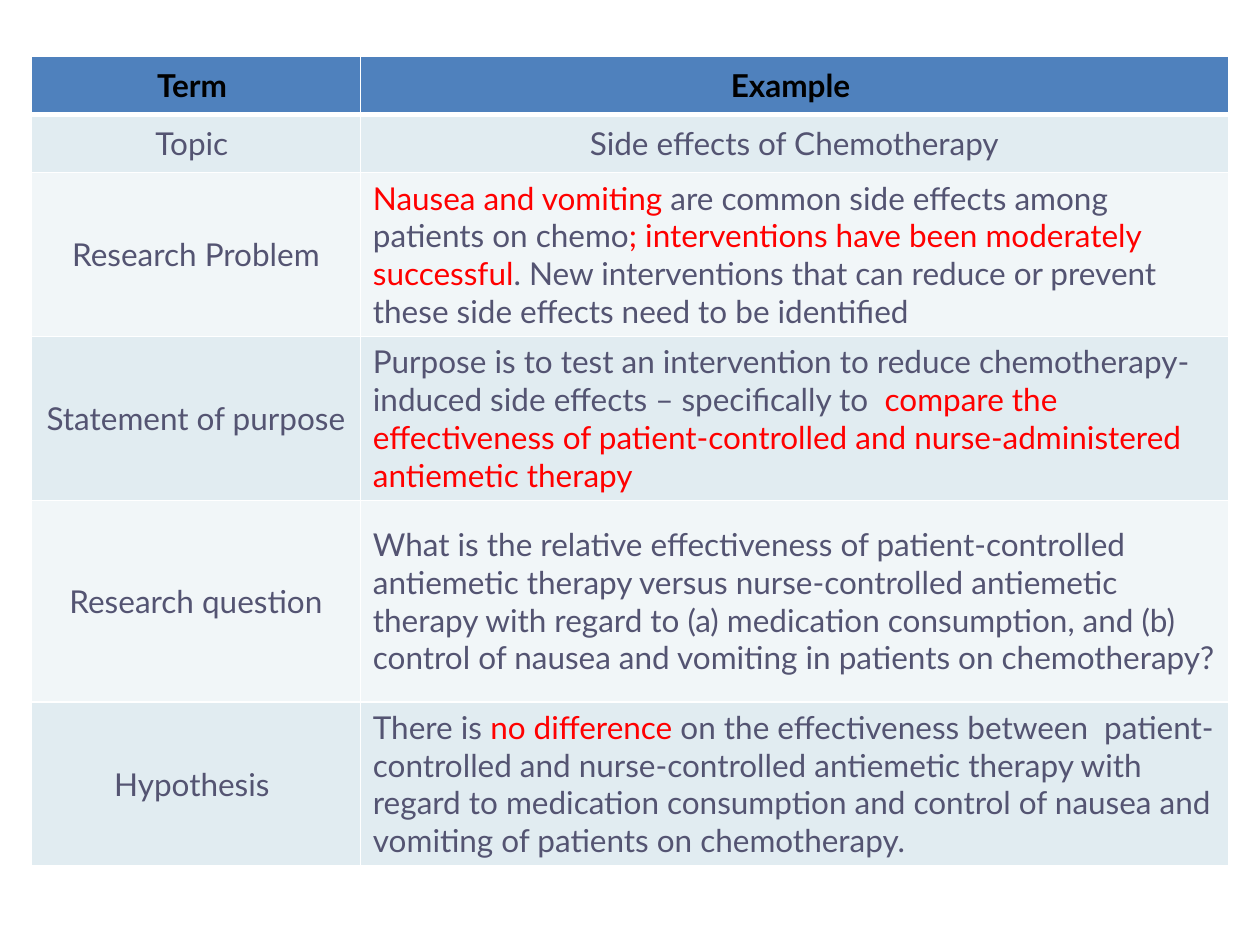
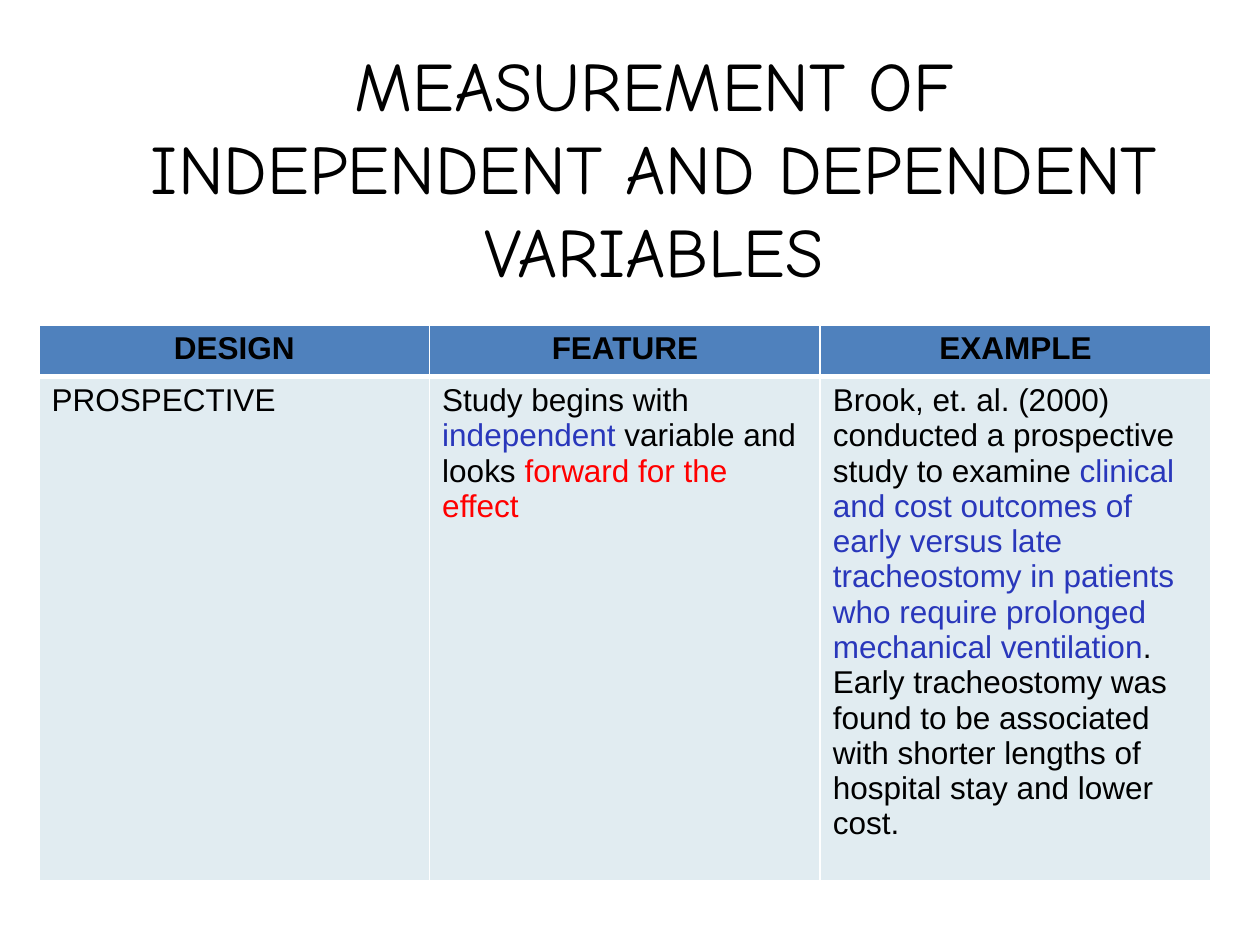
import lxml.etree
import pptx
import pptx.dml.color
import pptx.enum.text
import pptx.oxml.ns
import pptx.util

Inches = pptx.util.Inches
Pt = pptx.util.Pt
RGBColor = pptx.dml.color.RGBColor
ALIGN = pptx.enum.text.PP_ALIGN
ANCHOR = pptx.enum.text.MSO_ANCHOR
qn = pptx.oxml.ns.qn

BLACK = RGBColor(0x00, 0x00, 0x00)
SLATE = RGBColor(0x54, 0x54, 0x72)
RED = RGBColor(0xFF, 0x00, 0x00)
INDIGO = RGBColor(0x29, 0x37, 0xBB)
HEADER_FILL = RGBColor(0x4F, 0x81, 0xBD)
BAND_FILLS = (RGBColor(0xF1, 0xF6, 0xF8), RGBColor(0xE1, 0xEC, 0xF1))
BORDER = RGBColor(0xFF, 0xFF, 0xFF)

RESEARCH_TERMS = [
    ["Term ", "Example "],
    ["Topic ", "Side effects of Chemotherapy"],
    ["Research Problem", [
        ("Nausea and vomiting ", RED),
        "are common side effects among patients on chemo",
        ("; interventions have been moderately successful", RED),
        ". New interventions that can reduce or prevent these side effects need to be identified"]],
    ["Statement of purpose", [
        "Purpose is to test an intervention to reduce chemotherapy-induced side effects – specifically to  ",
        ("compare the effectiveness of patient-controlled and nurse-administered antiemetic therapy", RED)]],
    ["Research question",
     "What is the relative effectiveness of patient-controlled antiemetic therapy versus "
     "nurse-controlled antiemetic therapy with regard to (a) medication consumption, and (b) "
     "control of nausea and vomiting in patients on chemotherapy?"],
    ["Hypothesis ", [
        "There is ",
        ("no difference ", RED),
        "on the effectiveness between  patient-controlled and nurse-controlled antiemetic therapy "
        "with regard to medication consumption and control of nausea and vomiting of patients on "
        "chemotherapy."]],
]

STUDY_DESIGNS = [
    ["DESIGN", "FEATURE", "EXAMPLE"],
    ["PROSPECTIVE", [
        "Study begins with ",
        ("independent", INDIGO),
        " variable and looks ",
        ("forward for the effect", RED)],
     ["Brook, et. al. (2000) conducted a prospective study to examine ",
      ("clinical and cost outcomes of early versus late tracheostomy in patients who require "
       "prolonged mechanical ventilation", INDIGO),
      ". Early tracheostomy was found to be associated with shorter lengths of hospital stay "
      "and lower cost."]],
]


def add_runs(paragraph, content, font_name, size, color, bold=False):
    """Write a string, or a list of strings and (text, colour) pairs, as runs."""
    for piece in [content] if isinstance(content, str) else content:
        text, run_color = (piece, color) if isinstance(piece, str) else piece
        run = paragraph.add_run()
        run.text = text
        run.font.name = font_name
        run.font.size = Pt(size)
        run.font.bold = bold
        run.font.color.rgb = run_color


def set_borders(cell, top, bottom):
    """Draw the cell's borders, one point wide at the sides."""
    properties = cell._tc.get_or_add_tcPr()
    for side, width in (("L", 1), ("R", 1), ("T", top), ("B", bottom)):
        line = lxml.etree.SubElement(properties, qn(f"a:ln{side}"), w=str(Pt(width)))
        fill = lxml.etree.SubElement(line, qn("a:solidFill"))
        lxml.etree.SubElement(fill, qn("a:srgbClr"), val=str(BORDER))


def add_title(slide, text):
    """Add the centred slide title."""
    box = slide.shapes.add_textbox(Inches(0.94), Inches(0.7), Inches(8.5), Inches(1.25))
    frame = box.text_frame
    frame.word_wrap = True
    frame.vertical_anchor = ANCHOR.MIDDLE
    paragraph = frame.paragraphs[0]
    paragraph.alignment = ALIGN.CENTER
    add_runs(paragraph, text, "Comic Neue", 39.6, BLACK)


def add_banded_table(slide, left, top, widths, heights, rows, font_name, color, anchor, is_centered):
    """Add a table with a blue header and alternating bands below it."""
    frame = slide.shapes.add_table(len(rows), len(widths), Inches(left), Inches(top),
                                   Inches(sum(widths)), Inches(sum(heights)))
    table = frame.table
    for column, width in zip(table.columns, widths):
        column.width = Inches(width)
    for row_index, (row, height) in enumerate(zip(rows, heights)):
        table.rows[row_index].height = Inches(height)
        is_header = row_index == 0
        for column_index, content in enumerate(row):
            cell = table.cell(row_index, column_index)
            set_borders(cell, top=3 if row_index == 1 else 1, bottom=3 if is_header else 1)
            cell.fill.solid()
            cell.fill.fore_color.rgb = HEADER_FILL if is_header else BAND_FILLS[row_index % 2]
            cell.vertical_anchor = anchor
            paragraph = cell.text_frame.paragraphs[0]
            centered = is_header or is_centered(row_index, column_index)
            paragraph.alignment = ALIGN.CENTER if centered else ALIGN.LEFT
            add_runs(paragraph, content, font_name, 18, BLACK if is_header else color, is_header)


def main():
    """Build the two slides and save them."""
    presentation = pptx.Presentation()
    presentation.slide_width = Inches(10)
    presentation.slide_height = Inches(7.5)
    blank = presentation.slide_layouts[6]

    terms_slide = presentation.slides.add_slide(blank)
    add_banded_table(terms_slide, 0.25, 0.45, [2.61, 6.89], [0.46, 0.46, 1.3, 1.3, 1.6, 1.3],
                     RESEARCH_TERMS, "Lato", SLATE, ANCHOR.MIDDLE,
                     lambda row, column: column == 0 or row == 1)

    designs_slide = presentation.slides.add_slide(blank)
    add_title(designs_slide, "MEASUREMENT OF INDEPENDENT AND DEPENDENT VARIABLES")
    add_banded_table(designs_slide, 0.31, 2.58, [3.1] * 3, [0.41] * 2,
                     STUDY_DESIGNS, "Arial", BLACK, ANCHOR.TOP,
                     lambda row, column: False)

    presentation.save("out.pptx")


if __name__ == "__main__":
    main()
